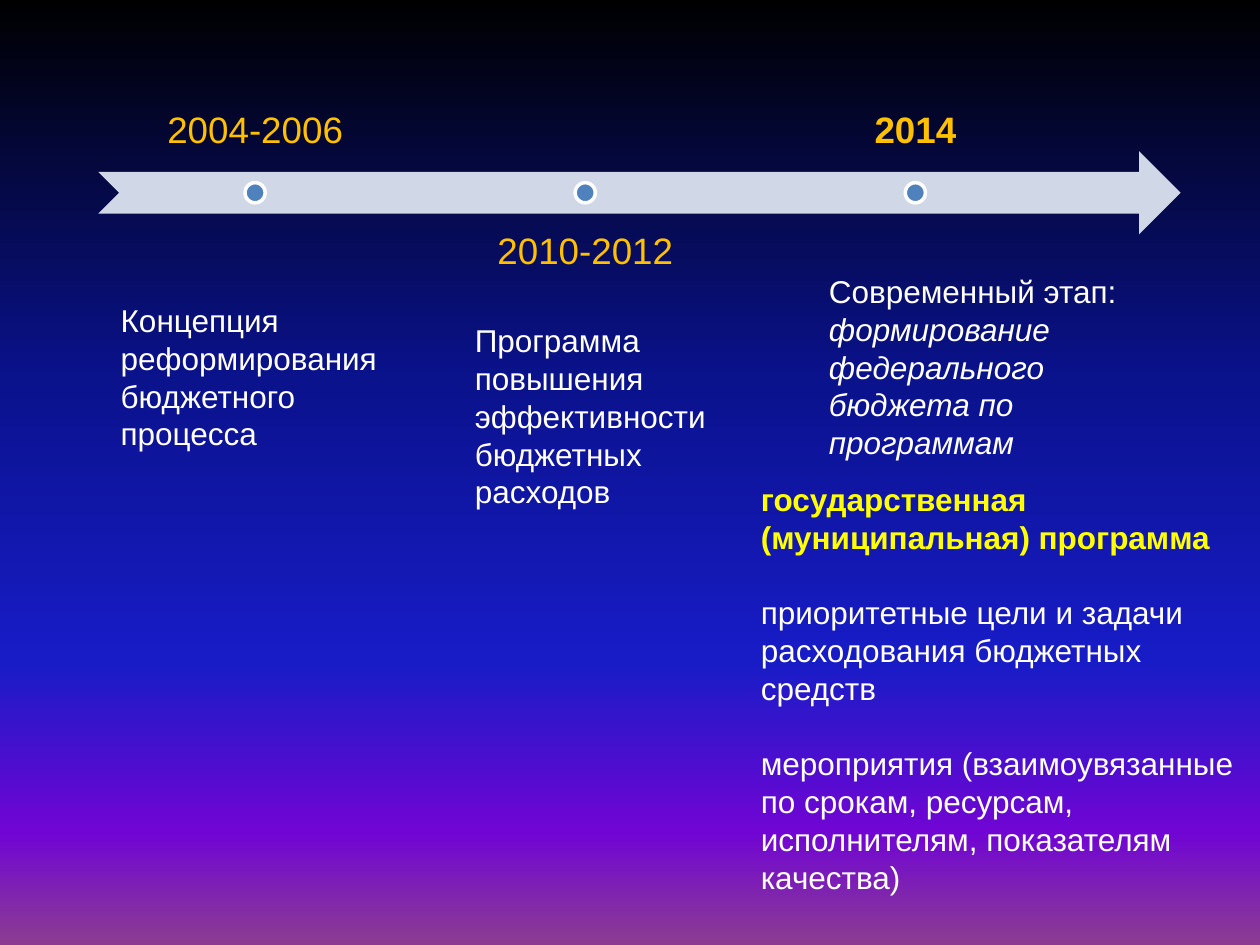
from dataclasses import dataclass

from lxml.etree import SubElement
from pptx import Presentation
from pptx.dml.color import RGBColor
from pptx.enum.shapes import MSO_SHAPE as Preset
from pptx.enum.text import MSO_ANCHOR as Anchor, MSO_AUTO_SIZE as AutoSize, PP_ALIGN as Align
from pptx.oxml.ns import qn
from pptx.util import Inches, Pt


@dataclass(frozen=True)
class Theme:
    font: str = "Arial"
    date_size: float = 21
    body_size: float = 18
    body_leading: float = 21.6
    white: str = "FFFFFF"
    gold: str = "FFC000"
    yellow: str = "FFFF00"
    arrow: str = "D0D8E8"
    dot: str = "4F81BD"
    backdrop: tuple = ((0, "000000"), (40, "0A128C"), (70, "181CC7"), (88, "7005D4"), (100, "8C3D91"))


@dataclass(frozen=True)
class Milestone:
    date: str
    above: bool
    bold: bool = False


@dataclass(frozen=True)
class Run:
    text: str
    color: str = Theme.white
    size: float = Theme.body_size
    bold: bool = False
    italic: bool = False


@dataclass(frozen=True)
class Note:
    left: float
    top: float
    width: float
    height: float
    paragraphs: tuple


MILESTONES = (
    Milestone("2004-2006", above=True),
    Milestone("2010-2012", above=False),
    Milestone("2014", above=True, bold=True),
)
NOTES = (
    Note(0.86, 2.34, 2.34, 1.31, ((Run("Концепция реформирования бюджетного процесса"),),)),
    Note(3.67, 2.5, 2.11, 1.62, ((Run("Программа повышения эффективности бюджетных расходов"),),)),
    Note(6.48, 2.11, 2.66, 1.62, ((
        Run("Современный этап: "),
        Run("формирование федерального бюджета по программам", italic=True),
    ),)),
    Note(5.94, 3.76, 4.06, 3.43, (
        (Run("государственная (муниципальная) программа", Theme.yellow, bold=True),),
        (Run("приоритетные цели и задачи расходования бюджетных средств"),),
        (Run("мероприятия (взаимоувязанные по срокам, ресурсам, исполнителям, показателям качества)"),),
    )),
)
FIRST_LEFT, STEP, DATE_WIDTH = 0.78, 2.62, 2.49
DATE_HEIGHT, DOT = 0.66, 0.16
ARROW_TOP, ARROW_WIDTH, ARROW_HEIGHT = 1.2, 8.59, 0.66


def paint_backdrop(slide) -> None:
    """Fill the slide background with the vertical theme gradient."""
    fill = slide.background.fill
    fill.gradient()
    fill.gradient_angle = 270
    stops = next(slide.element.iter(qn("a:gsLst")))
    for stop in list(stops):
        stops.remove(stop)
    for position, color in Theme.backdrop:
        stop = SubElement(stops, qn("a:gs"), pos=str(position * 1000))
        SubElement(stop, qn("a:srgbClr"), val=color)


def add_preset(shapes, preset, left: float, top: float, width: float, height: float,
               fill: str, outline: str | None = None) -> None:
    """Draw a flat preset shape, outlined only when a colour is given."""
    shape = shapes.add_shape(preset, Inches(left), Inches(top), Inches(width), Inches(height))
    shape.shadow.inherit = False
    shape.fill.solid()
    shape.fill.fore_color.rgb = RGBColor.from_string(fill)
    if outline:
        shape.line.color.rgb = RGBColor.from_string(outline)
        shape.line.width = Pt(2)
    else:
        shape.line.fill.background()


def add_text(shapes, paragraphs: tuple, left: float, top: float, width: float, height: float, *,
             align=Align.LEFT, anchor=Anchor.TOP, inset: float | None = None,
             leading=None, gap: float = 0, grow: bool = False) -> None:
    """Add a wrapped text box holding paragraphs of formatted runs."""
    box = shapes.add_textbox(Inches(left), Inches(top), Inches(width), Inches(height))
    frame = box.text_frame
    frame.word_wrap = True
    frame.vertical_anchor = anchor
    frame.auto_size = AutoSize.SHAPE_TO_FIT_TEXT if grow else AutoSize.NONE
    if inset is not None:
        frame.margin_left = frame.margin_right = Inches(inset)
        frame.margin_top = frame.margin_bottom = Inches(inset)
    for index, runs in enumerate(paragraphs):
        paragraph = frame.add_paragraph() if index else frame.paragraphs[0]
        paragraph.alignment = align
        paragraph.line_spacing = leading
        if index:
            paragraph.space_before = Pt(gap)
        for part in runs:
            run = paragraph.add_run()
            run.text = part.text
            run.font.name = Theme.font
            run.font.size = Pt(part.size)
            run.font.bold = part.bold
            run.font.italic = part.italic
            run.font.color.rgb = RGBColor.from_string(part.color)


def add_timeline(shapes) -> None:
    """Draw the arrow with evenly spaced dots and their dates."""
    add_preset(shapes, Preset.NOTCHED_RIGHT_ARROW, FIRST_LEFT, ARROW_TOP,
               ARROW_WIDTH, ARROW_HEIGHT, Theme.arrow)
    for index, milestone in enumerate(MILESTONES):
        left = FIRST_LEFT + index * STEP
        date = Run(milestone.date, Theme.gold, Theme.date_size, milestone.bold)
        add_text(shapes, ((date,),), left, 0.7 if milestone.above else 1.69,
                 DATE_WIDTH, DATE_HEIGHT, align=Align.CENTER, inset=0.16, leading=0.9,
                 anchor=Anchor.BOTTOM if milestone.above else Anchor.TOP)
        add_preset(shapes, Preset.OVAL, left + (DATE_WIDTH - DOT) / 2,
                   ARROW_TOP + (ARROW_HEIGHT - DOT) / 2, DOT, DOT, Theme.dot, Theme.white)


def main() -> None:
    """Build the budget reform timeline slide."""
    deck = Presentation()
    deck.slide_width, deck.slide_height = Inches(10), Inches(7.5)
    slide = deck.slides.add_slide(deck.slide_layouts[6])
    paint_backdrop(slide)
    add_timeline(slide.shapes.add_group_shape().shapes)
    for note in NOTES:
        add_text(slide.shapes, note.paragraphs, note.left, note.top, note.width, note.height,
                 leading=Pt(Theme.body_leading), gap=Theme.body_leading, grow=True)
    deck.save("out.pptx")


if __name__ == "__main__":
    main()
